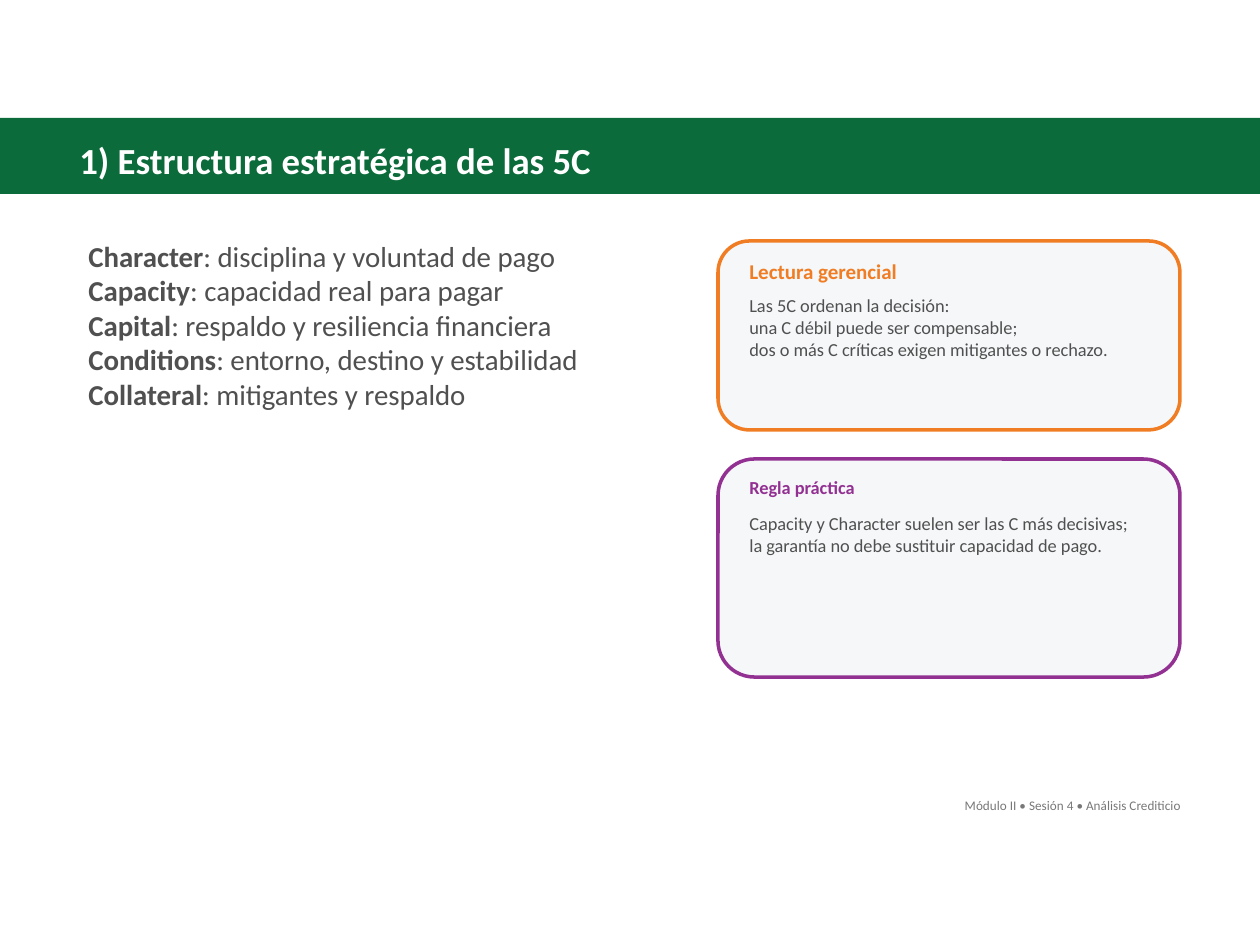
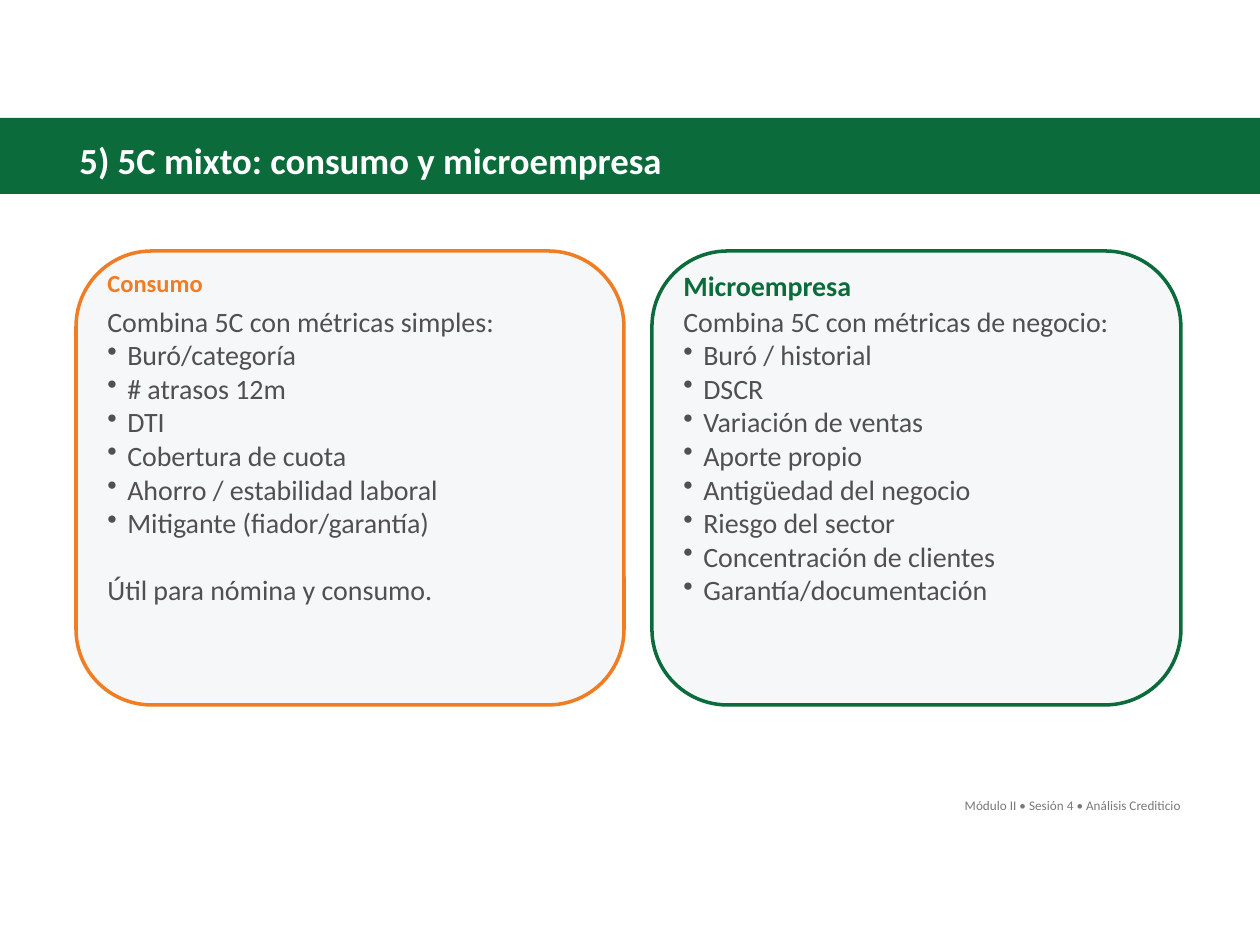
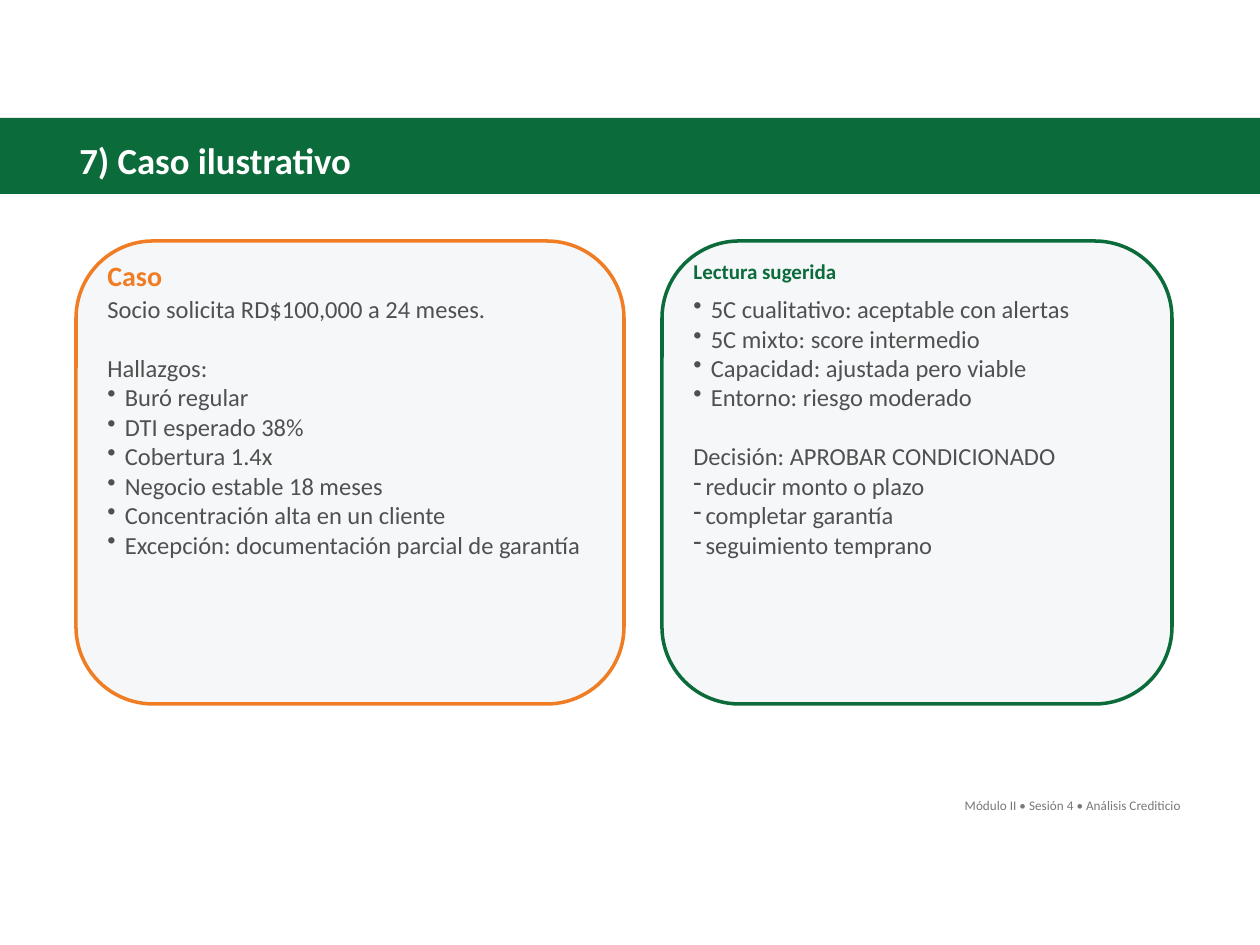
from lxml import etree
from pptx import Presentation
from pptx.dml.color import RGBColor
from pptx.enum.shapes import MSO_SHAPE
from pptx.enum.text import MSO_AUTO_SIZE, PP_ALIGN
from pptx.oxml.ns import qn
from pptx.util import Pt

RECT = MSO_SHAPE.RECTANGLE
ROUND = MSO_SHAPE.ROUNDED_RECTANGLE
GROW = MSO_AUTO_SIZE.SHAPE_TO_FIT_TEXT
RIGHT = PP_ALIGN.RIGHT

GREEN = RGBColor(0x0B, 0x6B, 0x3A)
ORANGE = RGBColor(0xF0, 0x7D, 0x23)
PURPLE = RGBColor(0x93, 0x31, 0x93)
PALE = RGBColor(0xF5, 0xF7, 0xF9)
DARK = RGBColor(0x50, 0x50, 0x50)
GRAY = RGBColor(0x78, 0x78, 0x78)
WHITE = RGBColor(0xFF, 0xFF, 0xFF)

FONT = "Calibri"
SCALE = 914400 / 126
MARKS = {"• ": 1.25, "- ": 0.87}
FOOTER = "Módulo II • Sesión 4 • Análisis Crediticio"

FIVE = [
    ("Character", "disciplina y voluntad de pago"),
    ("Capacity", "capacidad real para pagar"),
    ("Capital", "respaldo y resiliencia financiera"),
    ("Conditions", "entorno, destino y estabilidad"),
    ("Collateral", "mitigantes y respaldo"),
]

SLIDES = [
    ("1) Estructura estratégica de las 5C", 542, [
        ((718, 241, 462, 189), ORANGE, ("Lectura gerencial", 12, 175, 38), (10.5, 392, 79), [[
            "Las 5C ordenan la decisión:",
            "una C débil puede ser compensable;",
            "dos o más C críticas exigen mitigantes o rechazo."]]),
        ((718, 459, 462, 218), PURPLE, ("Regla práctica", 10.5, 134, 35), (10.5, 411, 57), [[
            "Capacity y Character suelen ser las C más decisivas;",
            "la garantía no debe sustituir capacidad de pago."]]),
    ]),
    ("5) 5C mixto: consumo y microempresa", 614, [
        ((76, 251, 548, 454), ORANGE, ("Consumo", 14, 121, 43), (16, 417, 318), [
            ["Combina 5C con métricas simples:",
             "• Buró/categoría",
             "• # atrasos 12m",
             "• DTI",
             "• Cobertura de cuota",
             "• Ahorro / estabilidad laboral",
             "• Mitigante (fiador/garantía)"],
            ["Útil para nómina y consumo."]]),
        ((652, 251, 529, 454), GREEN, ("Microempresa", 16, 195, 47), (16, 456, 318), [[
            "Combina 5C con métricas de negocio:",
            "• Buró / historial",
            "• DSCR",
            "• Variación de ventas",
            "• Aporte propio",
            "• Antigüedad del negocio",
            "• Riesgo del sector",
            "• Concentración de clientes",
            "• Garantía/documentación"]]),
    ]),
    ("7) Caso ilustrativo", 300, [
        ((76, 241, 548, 463), ORANGE, ("Caso", 16, 81, 47), (14, 504, 280), [
            ["Socio solicita RD$100,000 a 24 meses."],
            ["Hallazgos:",
             "• Buró regular",
             "• DTI esperado 38%",
             "• Cobertura 1.4x",
             "• Negocio estable 18 meses",
             "• Concentración alta en un cliente",
             "• Excepción: documentación parcial de garantía"]]),
        ((662, 241, 510, 463), GREEN, ("Lectura sugerida", 12, 170, 38), (14, 406, 285), [
            ["• 5C cualitativo: aceptable con alertas",
             "• 5C mixto: score intermedio",
             "• Capacidad: ajustada pero viable",
             "• Entorno: riesgo moderado"],
            ["Decisión: APROBAR CONDICIONADO",
             "- reducir monto o plazo",
             "- completar garantía",
             "- seguimiento temprano"]]),
    ]),
]


def draw(slide, kind, box, fill, line=None):
    shape = slide.shapes.add_shape(kind, *[round(n * SCALE) for n in box])
    shape.shadow.inherit = False
    shape.fill.solid()
    shape.fill.fore_color.rgb = fill
    if line is None:
        shape.line.fill.background()
    else:
        shape.line.color.rgb = line
        shape.line.width = Pt(2)


def write(slide, box, groups, size, color, bold=False, wrap=False):
    frame = slide.shapes.add_textbox(*[round(n * SCALE) for n in box]).text_frame
    frame.word_wrap = wrap
    frame.auto_size = GROW
    lines = [(text, g > 0 and n == 0) for g, group in enumerate(groups) for n, text in enumerate(group)]
    for n, (text, gap) in enumerate(lines):
        para = frame.add_paragraph() if n else frame.paragraphs[0]
        if gap:
            para.space_before = Pt(size * 1.2)
        mark = text[:2]
        if mark in MARKS:
            text = text[2:]
            props = para._p.get_or_add_pPr()
            dent = Pt(size * MARKS[mark] * 0.57)
            props.set("marL", str(dent))
            props.set("indent", str(-dent))
            etree.SubElement(props, qn("a:buChar")).set("char", mark[0])
        para.add_run().text = text
        para.font.name = FONT
        para.font.size = Pt(size)
        para.font.color.rgb = color
        para.font.bold = bold
    return frame


deck = Presentation()
deck.slide_width = round(1260 * SCALE)
deck.slide_height = round(945 * SCALE)

for title, width, cards in SLIDES:
    slide = deck.slides.add_slide(deck.slide_layouts[6])
    draw(slide, RECT, (0, 118, 1260, 76), GREEN)
    write(slide, (67, 132, width, 57), [[title]], 21, WHITE, True)
    for box, tint, (head, big, wide, high), (size, span, tall), groups in cards:
        left, top = box[0] + 19, box[1] + 11
        draw(slide, ROUND, box, PALE, tint)
        write(slide, (left, top, wide, high), [[head]], big, tint, True)
        write(slide, (left, top + 36, span, tall), groups, size, DARK)
    foot = write(slide, (950, 791, 243, 29), [[FOOTER]], 7.5, GRAY)
    foot.paragraphs[0].alignment = RIGHT

names = [name for name, about in FIVE]
frame = write(deck.slides[0], (76, 232, 624, 188), [names], 16.5, DARK, wrap=True)
for para, (name, about) in zip(frame.paragraphs, FIVE):
    para.runs[0].font.bold = True
    para.add_run().text = f": {about}"

deck.save("out.pptx")
